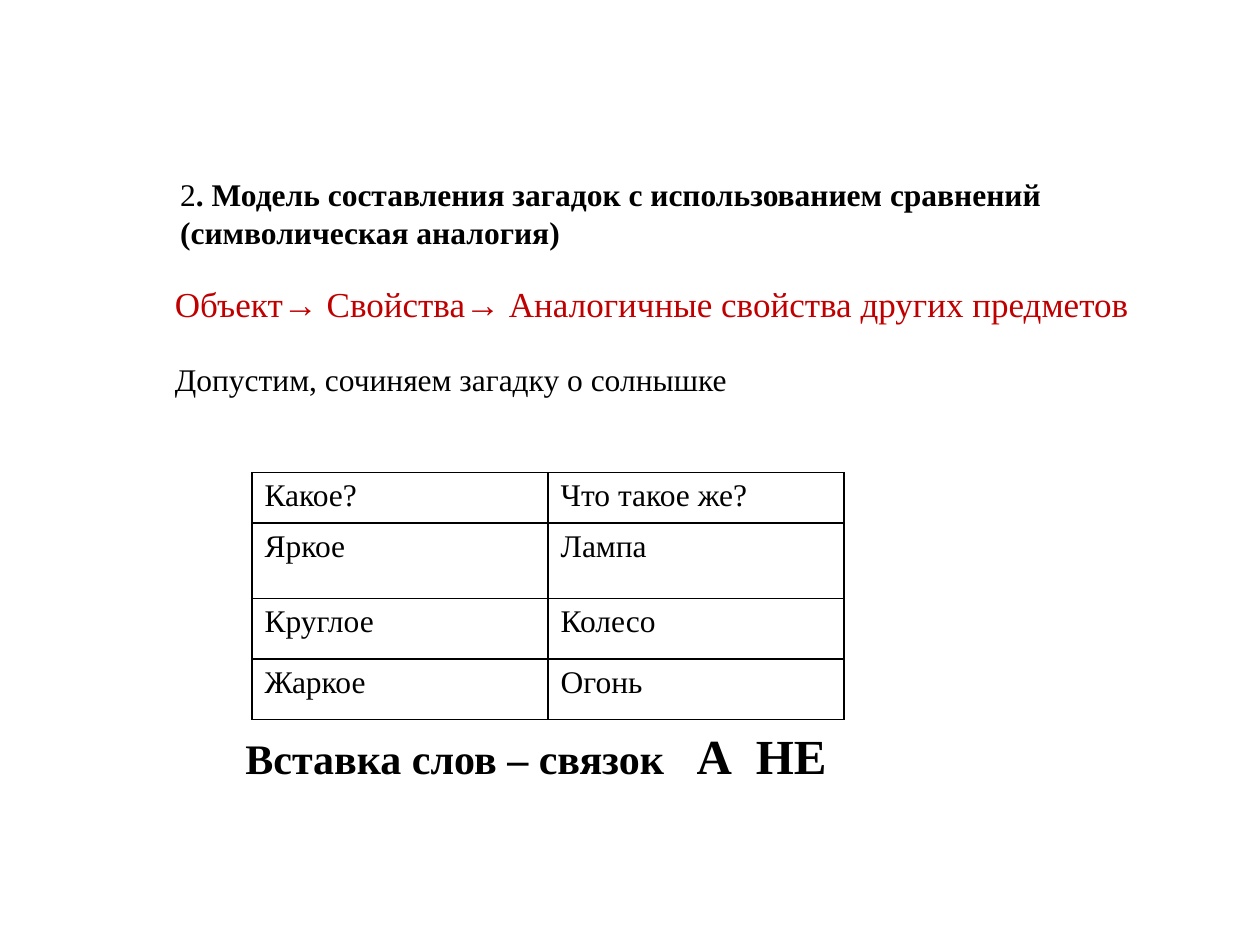
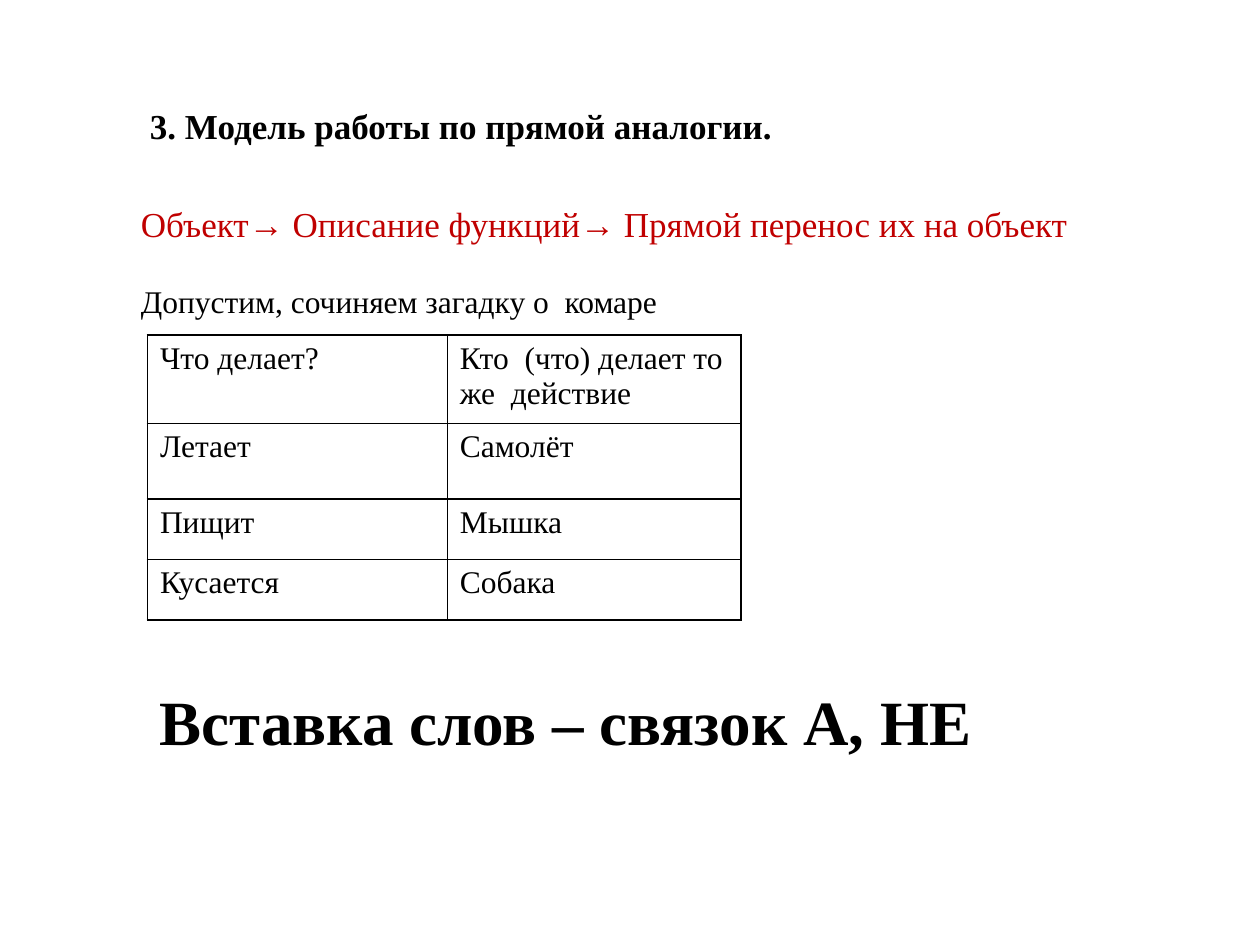
from dataclasses import dataclass

from lxml.etree import SubElement
from pptx import Presentation
from pptx.dml.color import RGBColor
from pptx.enum.text import MSO_ANCHOR, MSO_AUTO_SIZE, PP_ALIGN
from pptx.oxml.ns import qn
from pptx.util import Inches, Pt


@dataclass(frozen=True)
class Theme:
    font: str = "Times New Roman"
    ink: RGBColor = RGBColor(0, 0, 0)
    accent: RGBColor = RGBColor(0xC0, 0, 0)
    body: int = 18
    scheme: int = 20
    border: int = 1


THEME = Theme()
COLUMNS, ROWS = 100, 75  # square grid of tenths of an inch
TITLE_ONLY = 5


def grid(*cells):
    return [Inches(n / 10) for n in cells]


def style(r, size, color=THEME.ink, bold=False):
    r.font.name = THEME.font
    r.font.size = Pt(size)
    r.font.color.rgb = color
    r.font.bold = bold


def write(tf, runs, color=THEME.ink):
    """Fill one left-aligned paragraph; runs are (text, size, bold)."""
    tf.word_wrap = True
    tf.auto_size = MSO_AUTO_SIZE.NONE
    tf.vertical_anchor = MSO_ANCHOR.TOP
    p = tf.paragraphs[0]
    p.alignment = PP_ALIGN.LEFT
    for text, size, bold in runs:
        r = p.add_run()
        r.text = text
        style(r, size, color, bold)
    return p


def add_title(s, box, runs):
    title = s.shapes.title
    title.left, title.top, title.width, title.height = grid(*box)
    write(title.text_frame, runs)


def add_text(s, box, runs, color=THEME.ink):
    return write(s.shapes.add_textbox(*grid(*box)).text_frame, runs, color)


def add_tabs(p, *stops):
    tabs = SubElement(p._p.get_or_add_pPr(), qn("a:tabLst"))
    for stop in grid(*stops):
        SubElement(tabs, qn("a:tab"), pos=str(stop), algn="l")


def outline(cell):
    tcPr = cell._tc.get_or_add_tcPr()
    for side in ("lnL", "lnR", "lnT", "lnB"):
        ln = SubElement(tcPr, qn(f"a:{side}"), w=str(Pt(THEME.border)))
        fill = SubElement(ln, qn("a:solidFill"))
        SubElement(fill, qn("a:srgbClr"), val=str(THEME.ink))


def add_comparison(s, left, top, widths, heights, rows):
    size = grid(left, top, sum(widths), sum(heights))
    table = s.shapes.add_table(len(rows), len(widths), *size).table
    table.first_row = table.horz_banding = False
    for column, width in zip(table.columns, grid(*widths)):
        column.width = width
    for row, height, texts in zip(table.rows, grid(*heights), rows):
        row.height = height
        for cell, text in zip(row.cells, texts):
            cell.text_frame.text = text
            style(cell.text_frame.paragraphs[0].runs[0], THEME.body)
            outline(cell)
            cell.fill.background()


def add_model(prs, title_box, title, left, scheme_top, scheme, example_top, example):
    """Add a slide with its title, red scheme line and example line."""
    s = prs.slides.add_slide(prs.slide_layouts[TITLE_ONLY])
    add_title(s, title_box, title)
    add_text(s, (left, scheme_top, 78.9, 4.4),
             [(scheme, THEME.scheme, False)], THEME.accent)
    add_text(s, (left, example_top, 50, 4), [(example, THEME.body, False)])
    return s


def main():
    prs = Presentation()
    prs.slide_width, prs.slide_height = grid(COLUMNS, ROWS)

    s = add_model(
        prs, (13.3, 13.4, 78.1, 7),
        [("2", THEME.body, False),
         (". Модель составления загадок с использованием сравнений "
          "(символическая аналогия)", THEME.body, True)],
        12.9, 21.9, "Объект→ Свойства→ Аналогичные свойства других предметов",
        28.1, "Допустим, сочиняем загадку о солнышке")
    add_comparison(s, 20, 37.5, (23.5, 23.5), (4, 6, 4.8, 4.8), [
        ("Какое?", "Что такое же?"),
        ("Яркое", "Лампа"),
        ("Круглое", "Колесо"),
        ("Жаркое", "Огонь")])
    p = add_text(s, (18.5, 57.1, 51, 5.7),
                 [("Вставка слов – связок", 24, True), ("\tА\tНЕ", 28, True)])
    add_tabs(p, 35.8, 40.5)

    s = add_model(
        prs, (10.9, 7.8, 78.1, 4.4),
        [("3. Модель работы по прямой аналогии.", THEME.scheme, True)],
        10.2, 15.6, "Объект→ Описание функций→ Прямой перенос их на объект",
        21.9, "Допустим, сочиняем загадку о  комаре")
    add_comparison(s, 11.7, 26.6, (23.8, 23.3), (7, 6, 4.8, 4.8), [
        ("Что делает?", "Кто  (что) делает то же  действие"),
        ("Летает", "Самолёт"),
        ("Пищит", "Мышка"),
        ("Кусается", "Собака")])
    add_text(s, (11.7, 53.7, 71.9, 7), [("Вставка слов – связок А, НЕ", 36, True)])

    prs.save("out.pptx")


if __name__ == "__main__":
    main()
